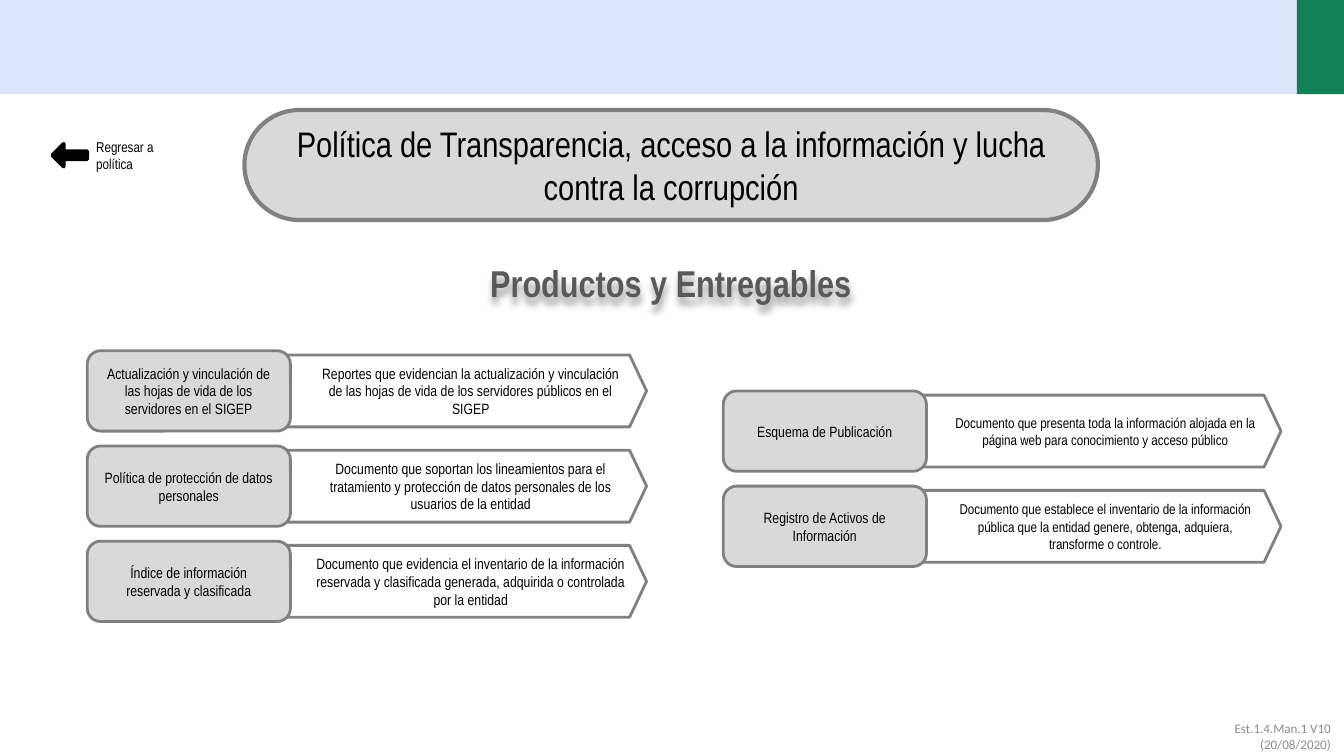
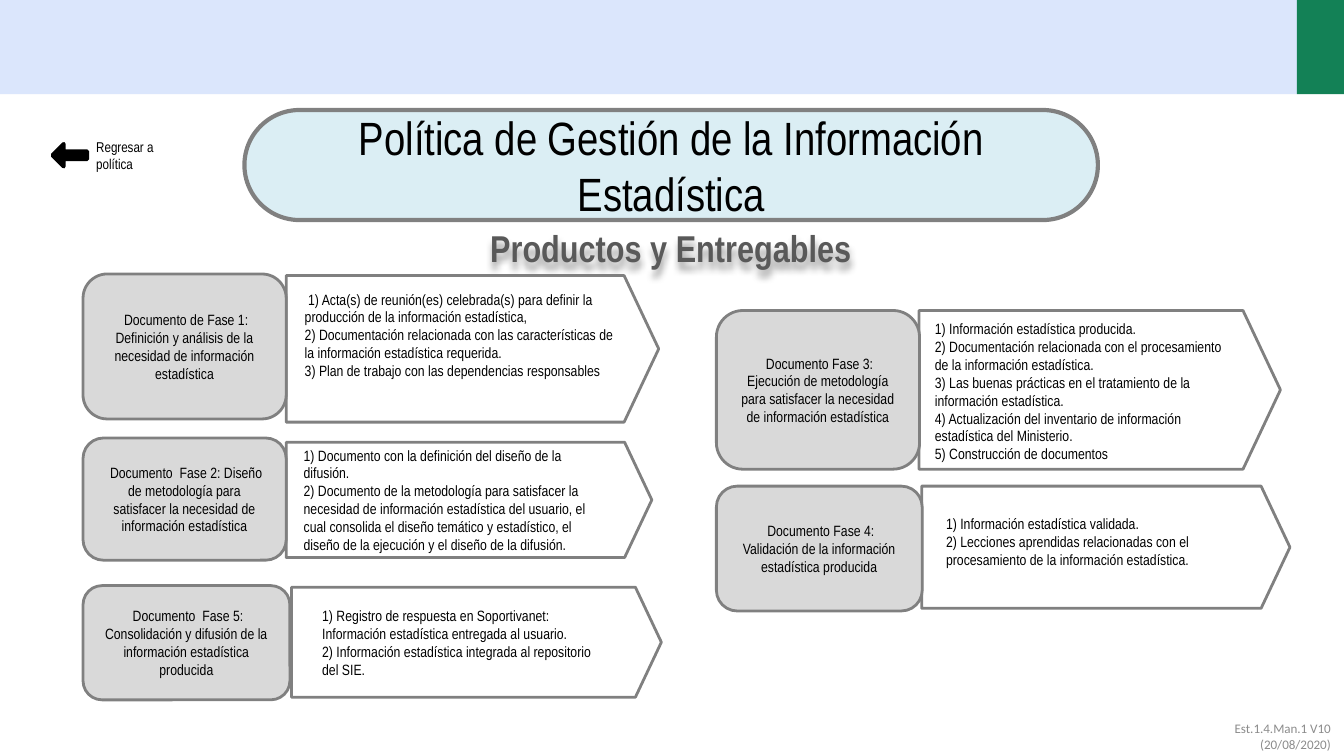
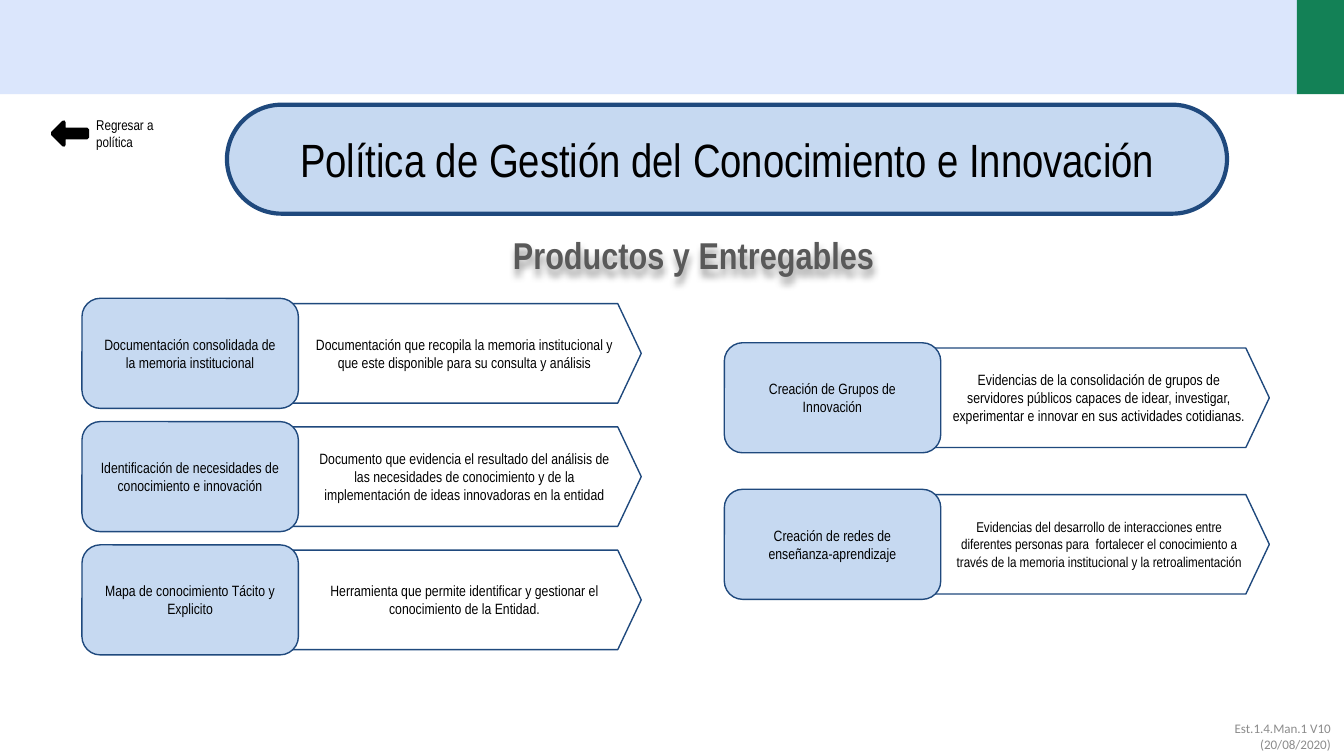
import pptx
import pptx.dml.color
import pptx.enum.shapes
import pptx.enum.text
import pptx.oxml
import pptx.util
from pptx.util import Cm

RGBColor = pptx.dml.color.RGBColor
SHAPE = pptx.enum.shapes.MSO_SHAPE
ALIGN = pptx.enum.text.PP_ALIGN
ANCHOR = pptx.enum.text.MSO_ANCHOR

BLACK = RGBColor(0x00, 0x00, 0x00)
GREEN = RGBColor(0x13, 0x81, 0x56)
PALE_BLUE = RGBColor(0xDB, 0xE6, 0xFC)
LIGHT_GRAY = RGBColor(0xD9, 0xD9, 0xD9)
GRAY = RGBColor(0x80, 0x80, 0x80)
FOOTER_GRAY = RGBColor(0x8C, 0x8C, 0x8C)
HEADING_GRAY = RGBColor(0x59, 0x59, 0x59)
ICE = RGBColor(0xDB, 0xEE, 0xF4)
SKY = RGBColor(0xC6, 0xD9, 0xF1)
NAVY = RGBColor(0x1F, 0x49, 0x7D)

FONT = "Arial Narrow"
HEADING = "Productos y Entregables"
BACK_LABEL = "Regresar a política"
FOOTER = "Est.1.4.Man.1 V10 (20/08/2020)"
SHADOW = (
    '<a:effectLst xmlns:a="http://schemas.openxmlformats.org/drawingml/2006/main">'
    '<a:outerShdw blurRad="50800" dist="38100" dir="5400000" algn="t" rotWithShape="0">'
    '<a:srgbClr val="000000"><a:alpha val="40000"/></a:srgbClr></a:outerShdw></a:effectLst>'
)

# Lengths are centimetres; boxes are (left, top, width, height).
# Columns of equal rows: each row is (label, description, description size).
TRANSPARENCY = {
    "title": "Política de Transparencia, acceso a la información y lucha contra la corrupción",
    "title_size": 19, "pill": (4.62, 2.08, 16.13, 2.08), "pill_fill": LIGHT_GRAY,
    "label_fill": LIGHT_GRAY, "line": GRAY, "line_width": 1.5,
    "heading": (3.23, 4.8), "back_top": 2.49,
    "label_size": (3.84, 1.52), "plate_inset": 0.08,
    "columns": [
        {"left": 1.65, "top": 6.63, "pitch": 1.8, "plate_left": 4.95, "plate_width": 7.27, "rows": [
            ("Actualización y vinculación de las hojas de vida de los servidores en el SIGEP",
             "Reportes que evidencian la actualización y vinculación de las hojas de vida de los "
             "servidores públicos en el SIGEP", 8),
            ("Política de protección de datos personales",
             "Documento que soportan los lineamientos para el tratamiento y protección de datos "
             "personales de los usuarios de la entidad", 8),
            ("Índice de información reservada y clasificada",
             "Documento que evidencia el inventario de la información reservada y clasificada "
             "generada, adquirida o controlada por la entidad", 8)]},
        {"left": 13.67, "top": 7.39, "pitch": 1.8, "plate_left": 16.94, "plate_width": 7.27, "rows": [
            ("Esquema de Publicación",
             "Documento que presenta toda la información alojada en la página web para "
             "conocimiento y acceso público", 7.6),
            ("Registro de Activos de Información",
             "Documento que establece el inventario de la información pública que la entidad "
             "genere, obtenga, adquiera, transforme o controle.", 7.6)]},
    ],
}

# Phases of different heights: label box, plate box, (left, top, width) of the list.
STATISTICS = {
    "title": "Política de Gestión de la Información Estadística",
    "title_size": 25, "pill": (4.62, 2.08, 16.13, 2.08), "pill_fill": ICE,
    "label_fill": LIGHT_GRAY, "line": GRAY, "line_width": 1.5,
    "heading": (3.23, 4.14), "back_top": 2.49,
    "phases": [
        (" Documento de Fase 1: Definición y análisis de la necesidad de información estadística",
         [" 1) Acta(s) de reunión(es) celebrada(s) para definir la producción de la información "
          "estadística,",
          "2) Documentación relacionada con las características de la información estadística "
          "requerida.",
          "3) Plan de trabajo con las dependencias responsables"],
         (1.57, 5.18, 3.84, 2.74), (5.41, 5.21, 7.04, 2.77), (5.51, 5.36, 6.4)),
        (" Documento  Fase 2: Diseño de metodología para satisfacer la necesidad de información "
         "estadística",
         ["1) Documento con la definición del diseño de la difusión.",
          "2) Documento de la metodología para satisfacer la necesidad de información estadística "
          "del usuario, el cual consolida el diseño temático y estadístico, el diseño de la "
          "ejecución y el diseño de la difusión."],
         (1.57, 8.28, 3.84, 2.31), (5.41, 8.36, 6.91, 2.18), (5.49, 8.31, 6)),
        (" Documento  Fase 5: Consolidación y difusión de la información estadística producida",
         ["1) Registro de respuesta en Soportivanet: Información estadística entregada al usuario.",
          "2) Información estadística integrada al repositorio del SIE."],
         (1.57, 11.07, 3.91, 2.16), (5.51, 11.1, 6.99, 2.08), (5.84, 11.35, 5.8)),
        (" Documento Fase 3: Ejecución de metodología para satisfacer la necesidad de información "
         "estadística",
         ["1) Información estadística producida.",
          "2) Documentación relacionada con el procesamiento de la información estadística.",
          "3) Las buenas prácticas en el tratamiento de la información estadística.",
          "4) Actualización del inventario de información estadística del Ministerio.",
          "5) Construcción de documentos"],
         (13.54, 5.87, 3.84, 3), (17.37, 5.87, 6.83, 3), (17.42, 5.92, 6)),
        (" Documento Fase 4: Validación de la información estadística producida",
         ["1) Información estadística validada.",
          "2) Lecciones aprendidas relacionadas con el procesamiento de la información "
          "estadística."],
         (13.54, 9.19, 3.89, 2.36), (17.42, 9.19, 6.96, 2.31), (17.63, 9.6, 6.22)),
    ],
}

KNOWLEDGE = {
    "title": "Política de Gestión del Conocimiento e Innovación",
    "title_size": 25, "pill": (4.29, 1.98, 18.9, 2.06), "pill_fill": SKY,
    "label_fill": SKY, "line": NAVY, "line_width": 0.75,
    "heading": (3.66, 4.27), "back_top": 2.08,
    "label_size": (4.09, 2.08), "plate_inset": 0.1,
    "columns": [
        {"left": 1.55, "top": 5.64, "pitch": 2.33, "plate_left": 4.88, "plate_width": 7.24, "rows": [
            ("Documentación consolidada de la memoria institucional",
             "Documentación que recopila la memoria institucional y que este disponible para su "
             "consulta y análisis", 8),
            ("Identificación de necesidades de conocimiento e innovación",
             "Documento que evidencia el resultado del análisis de las necesidades de conocimiento "
             "y de la implementación de ideas innovadoras en la entidad", 8),
            ("Mapa de conocimiento Tácito y Explicito",
             "Herramienta que permite identificar y gestionar el conocimiento de la Entidad.", 8)]},
        {"left": 13.69, "top": 6.48, "pitch": 2.77, "plate_left": 16.99, "plate_width": 7, "rows": [
            ("Creación de Grupos de Innovación",
             "Evidencias de la consolidación de grupos de servidores públicos capaces de idear, "
             "investigar, experimentar e innovar en sus actividades cotidianas.", 8),
            ("Creación de redes de enseñanza-aprendizaje",
             "Evidencias del desarrollo de interacciones entre diferentes personas para  fortalecer "
             "el conocimiento a través de la memoria institucional y la retroalimentación", 7.6)]},
    ],
}


def write(shape, lines, size, align=ALIGN.LEFT, anchor=ANCHOR.TOP, color=BLACK, font=FONT, bold=False):
    frame = shape.text_frame
    frame.word_wrap = True
    frame.auto_size = pptx.enum.text.MSO_AUTO_SIZE.NONE
    frame.vertical_anchor = anchor
    frame.text = "\n".join(lines)
    for paragraph in frame.paragraphs:
        paragraph.alignment = align
        for run in paragraph.runs:
            run.font.size = pptx.util.Pt(size)
            run.font.name = font
            run.font.bold = bold
            run.font.color.rgb = color


def add_shape(slide, kind, box, fill=None, line=None, line_width=1.5):
    shape = slide.shapes.add_shape(kind, *map(Cm, box))
    shape.shadow.inherit = False
    if fill is None:
        shape.fill.background()
    else:
        shape.fill.solid()
        shape.fill.fore_color.rgb = fill
    if line is None:
        shape.line.fill.background()
    else:
        shape.line.color.rgb = line
        shape.line.width = pptx.util.Pt(line_width)
    return shape


def add_text(slide, box, lines, size, **style):
    text_box = slide.shapes.add_textbox(*map(Cm, box))
    write(text_box, lines, size, **style)
    return text_box


def add_bands(slide):
    """Draw the top bands and hand them to the layout, so that every slide shows them."""
    tree = slide.slide_layout.shapes._spTree
    for box, color in [((24.51, 0, 0.89, 1.78), GREEN), ((0, 0, 24.51, 1.78), PALE_BLUE)]:
        tree.insert(2, add_shape(slide, SHAPE.RECTANGLE, box, color)._element)


def add_title(slide, content):
    pill = add_shape(slide, SHAPE.ROUNDED_RECTANGLE, content["pill"], content["pill_fill"],
                     content["line"], 2.25)
    pill.adjustments[0] = 0.5
    title = slide.shapes.title
    title._element.addprevious(pill._element)
    title.left, title.top, title.width, title.height = map(Cm, content["pill"])
    write(title, [content["title"]], content["title_size"], ALIGN.CENTER, ANCHOR.MIDDLE)
    title.text_frame.margin_left = title.text_frame.margin_right = Cm(0.56)


def add_frame(slide, content):
    """Add what surrounds the panels: title, heading, way back and footer."""
    add_title(slide, content)
    heading = add_text(slide, (*content["heading"], 18.9, 1.12), [HEADING], 20,
                       align=ALIGN.CENTER, color=HEADING_GRAY, bold=True)
    heading._element.spPr.append(pptx.oxml.parse_xml(SHADOW))
    top = content["back_top"]
    arrow = add_shape(slide, SHAPE.LEFT_ARROW, (0.99, top + 0.23, 0.66, 0.43), BLACK, BLACK, 2)
    arrow.adjustments[0] = 0.357
    add_text(slide, (1.57, top, 2, 0.91), [BACK_LABEL], 7.6)
    add_text(slide, (21.87, 13.54, 3.53, 0.76), [FOOTER], 7, align=ALIGN.RIGHT,
             anchor=ANCHOR.MIDDLE, color=FOOTER_GRAY, font="Calibri")


def add_panel(slide, content, label, label_box, plate_box):
    """Add a plate with its label over the left end, and return the plate."""
    outline = content["line"], content["line_width"]
    plate = add_shape(slide, SHAPE.PENTAGON, plate_box, None, *outline)
    plate.adjustments[0] = 0.236
    label_shape = add_shape(slide, SHAPE.ROUNDED_RECTANGLE, label_box, content["label_fill"], *outline)
    write(label_shape, [label], 8, ALIGN.CENTER, ANCHOR.MIDDLE)
    return plate


def add_columns(slide, content):
    width, height = content["label_size"]
    inset = content["plate_inset"]
    for column in content["columns"]:
        for index, (label, description, size) in enumerate(column["rows"]):
            top = column["top"] + index * column["pitch"]
            plate = add_panel(
                slide, content, label, (column["left"], top, width, height),
                (column["plate_left"], top + inset, column["plate_width"], height - 2 * inset))
            write(plate, [description], size, ALIGN.CENTER, ANCHOR.MIDDLE)
            plate.text_frame.margin_right = Cm(0.2)
            properties = plate.text_frame.paragraphs[0]._p.get_or_add_pPr()
            properties.set("marL", str(Cm(0.74)))


def add_phases(slide, content):
    for label, deliverables, label_box, plate_box, list_place in content["phases"]:
        add_panel(slide, content, label, label_box, plate_box)
        add_text(slide, (*list_place, plate_box[3] - 0.3), deliverables, 8)


def main():
    presentation = pptx.Presentation()
    presentation.slide_width, presentation.slide_height = Cm(25.4), Cm(14.29)
    layout = presentation.slide_layouts.get_by_name("Title Only")
    pages = [(TRANSPARENCY, add_columns), (STATISTICS, add_phases), (KNOWLEDGE, add_columns)]
    for index, (content, add_panels) in enumerate(pages):
        slide = presentation.slides.add_slide(layout)
        if index == 0:
            add_bands(slide)
        add_frame(slide, content)
        add_panels(slide, content)
    presentation.save("out.pptx")


if __name__ == "__main__":
    main()
